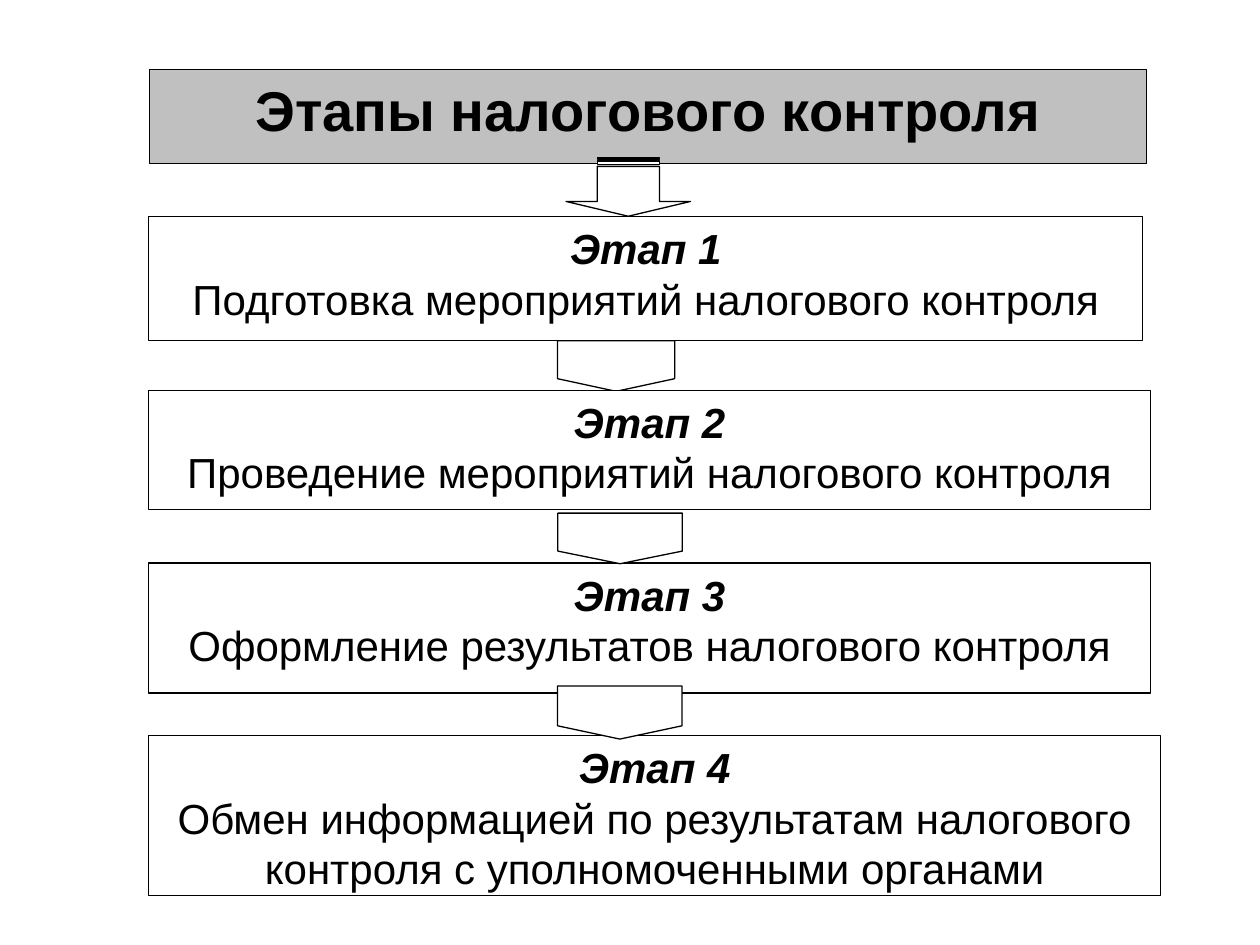
from pptx import Presentation
from pptx.dml.color import RGBColor
from pptx.enum.shapes import MSO_SHAPE
from pptx.enum.text import MSO_ANCHOR, PP_ALIGN
from pptx.util import Cm, Pt

COLORS = {"ink": "000000", "paper": "FFFFFF", "title": "C0C0C0"}

deck = Presentation()
deck.slide_width = Cm(25.4)
deck.slide_height = Cm(19.05)
page = deck.slides.add_slide(deck.slide_layouts[6])


def add_outlined(preset, left, top, width, height, fill="paper"):
    shape = page.shapes.add_shape(preset, Cm(left), Cm(top), Cm(width), Cm(height))
    shape.shadow.inherit = False
    shape.fill.solid()
    shape.fill.fore_color.rgb = RGBColor.from_string(COLORS[fill])
    shape.line.color.rgb = RGBColor.from_string(COLORS["ink"])
    shape.line.width = Pt(0.75)
    return shape


def write_centred(box, lines, size):
    frame = box.text_frame
    frame.word_wrap = True
    frame.vertical_anchor = MSO_ANCHOR.TOP
    frame.text = "\n".join(lines)
    for index, para in enumerate(frame.paragraphs):
        para.alignment = PP_ALIGN.CENTER
        for span in para.runs:
            span.font.name = "Arial"
            span.font.size = Pt(size)
            span.font.bold = index == 0
            span.font.color.rgb = RGBColor.from_string(COLORS["ink"])


title = add_outlined(MSO_SHAPE.RECTANGLE, 3.02, 1.4, 20.09, 1.9, "title")
write_centred(title, ["Этапы налогового контроля"], 32)

stages = [
    ("Подготовка мероприятий налогового контроля", 4.37, 20.04, 2.49),
    ("Проведение мероприятий налогового контроля", 7.87, 20.19, 2.41),
    ("Оформление результатов налогового контроля", 11.35, 20.19, 2.62),
    ("Обмен информацией по результатам налогового контроля с уполномоченными органами",
     14.83, 20.4, 3.23),
]
arrows = [
    (MSO_SHAPE.STRIPED_RIGHT_ARROW, 12.07, 2.51, 1.19, 2.51, [0.5, 0.25]),
    (MSO_SHAPE.PENTAGON, 11.91, 6.2, 1.02, 2.36, [0.25]),
    (MSO_SHAPE.PENTAGON, 11.99, 9.6, 1.02, 2.51, [0.25]),
    (MSO_SHAPE.PENTAGON, 11.96, 13.11, 1.07, 2.51, [0.25]),
]

boxes = []
for number, (description, top, width, height) in enumerate(stages, start=1):
    box = add_outlined(MSO_SHAPE.RECTANGLE, 3, top, width, height)
    write_centred(box, [f"Этап {number}", description], 24)
    box.text_frame.paragraphs[0].runs[0].font.italic = True
    boxes.append(box)

for preset, left, top, width, height, adjustments in arrows:
    arrow = add_outlined(preset, left, top, width, height)
    arrow.rotation = 90
    for index, value in enumerate(adjustments):
        arrow.adjustments[index] = value
    if top == 6.2:
        boxes[1].element.addprevious(arrow.element)

deck.save("out.pptx")
